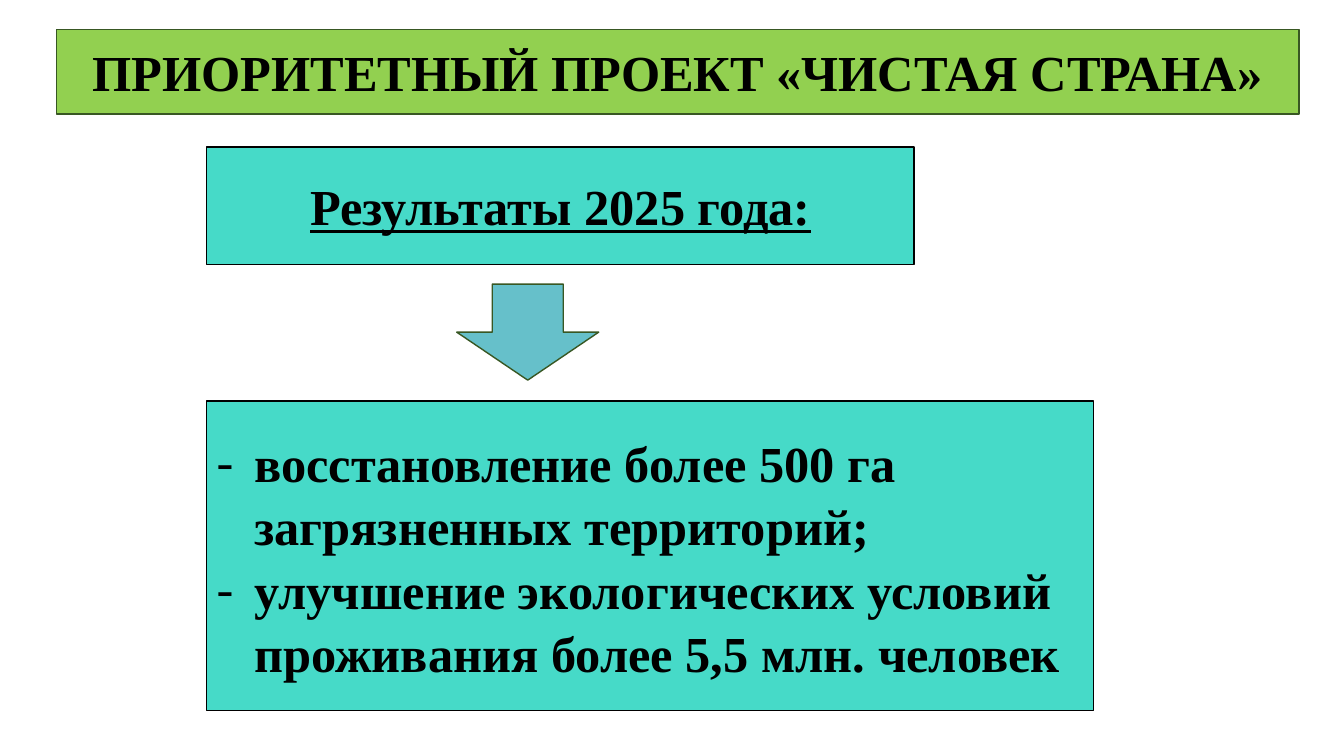
from lxml import etree
from pptx import Presentation
from pptx import util as u
from pptx.dml.color import RGBColor
from pptx.enum import shapes, text
from pptx.oxml.ns import qn

FONT = "Times New Roman"
GREEN, TEAL, BLUE = "92D050", "46DAC8", "66C0CA"
OLIVE, BLACK = "385723", "000000"


def color(value):
    return RGBColor.from_string(value)


def add_shape(slide, kind, box, fill, line):
    sp = slide.shapes.add_shape(kind, *(u.Cm(v) for v in box))
    sp.shadow.inherit = False
    sp.fill.solid()
    sp.fill.fore_color.rgb = color(fill)
    sp.line.color.rgb = color(line)
    sp.line.width = u.Pt(1)
    return sp


def add_dash(p, indent):
    pPr = p._p.get_or_add_pPr()
    pPr.set("marL", str(u.Cm(indent)))
    pPr.set("indent", str(-u.Cm(indent)))
    etree.SubElement(pPr, qn("a:buFont")).set("typeface", FONT)
    etree.SubElement(pPr, qn("a:buChar")).set("char", "-")


def add_panel(slide, box, fill, line, lines, underline=False, dashes=False):
    sp = add_shape(slide, shapes.MSO_SHAPE.RECTANGLE, box, fill, line)
    tf = sp.text_frame
    tf.word_wrap = True
    tf.vertical_anchor = text.MSO_ANCHOR.MIDDLE
    for i, line_text in enumerate(lines):
        p = tf.add_paragraph() if i else tf.paragraphs[0]
        p.alignment = text.PP_ALIGN.LEFT if dashes else text.PP_ALIGN.CENTER
        if dashes:
            p.line_spacing = 1.05
            add_dash(p, 0.95)
        r = p.add_run()
        r.text = line_text
        r.font.name = FONT
        r.font.size = u.Pt(36)
        r.font.bold = True
        r.font.underline = underline
        r.font.color.rgb = color(BLACK)


def add_title(slide, box):
    add_panel(slide, box, GREEN, OLIVE,
              ["ПРИОРИТЕТНЫЙ ПРОЕКТ «ЧИСТАЯ СТРАНА»"])


def add_results(slide, left, top):
    # Heading
    add_panel(slide, (left, top, 17.83, 2.95), TEAL, BLACK,
              ["Результаты 2025 года:"], underline=True)
    # Arrow from heading to list
    add_shape(slide, shapes.MSO_SHAPE.DOWN_ARROW,
              (left + 6.3, top + 3.45, 3.58, 2.42), BLUE, OLIVE)
    # List of results
    add_panel(slide, (left, top + 6.4, 22.35, 7.8), TEAL, BLACK,
              ["восстановление более 500 га загрязненных территорий;",
               "улучшение экологических условий проживания более 5,5 млн. человек"],
              dashes=True)


def main():
    prs = Presentation()
    prs.slide_width, prs.slide_height = u.Cm(33.87), u.Cm(19.05)
    slide = prs.slides.add_slide(prs.slide_layouts[6])
    add_title(slide, (1.42, 0.74, 31.32, 2.13))
    add_results(slide, 5.21, 3.71)
    prs.save("out.pptx")


if __name__ == "__main__":
    main()
